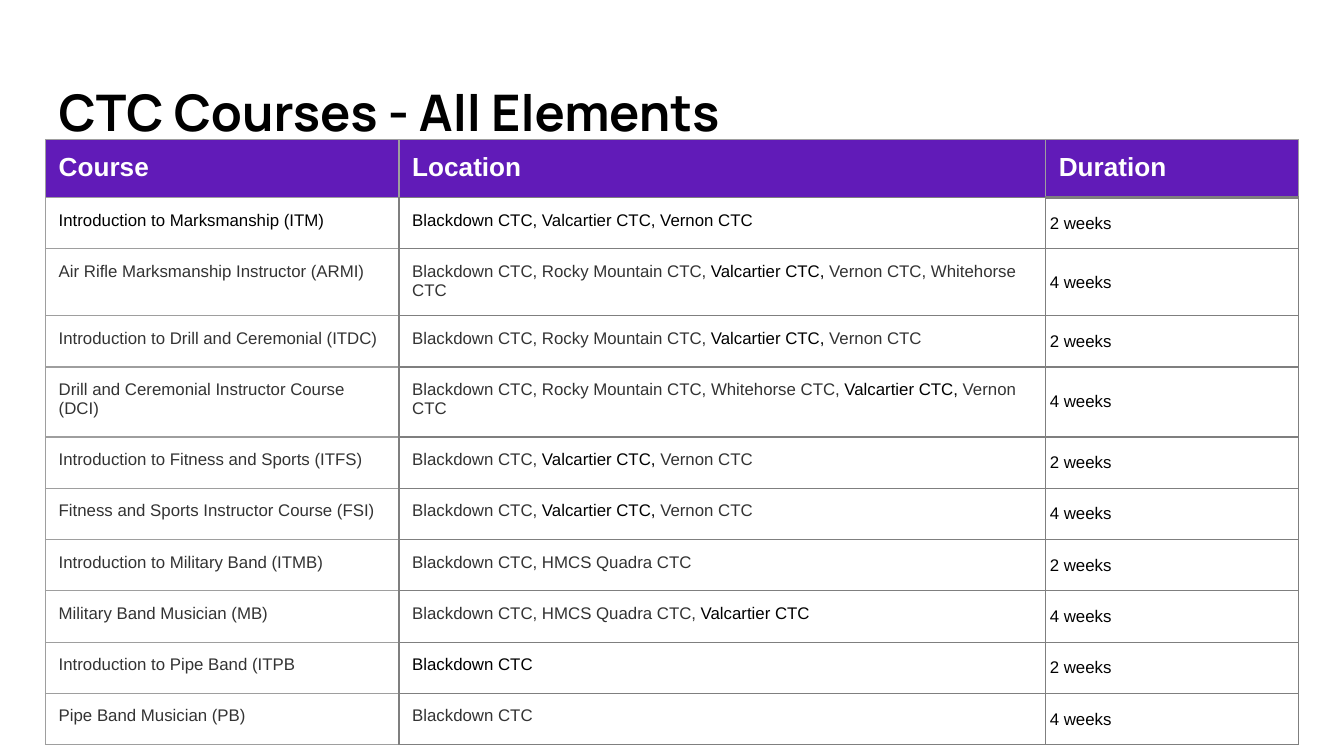
from lxml import etree
from pptx import Presentation, util as u
from pptx.dml import color
from pptx.enum import text
from pptx.oxml import ns

HUES = {"head": "611BB8", "white": "FFFFFF", "black": "000000",
        "body": "333333", "pale": "9E9E9E", "line": "7F7F7F"}
COLS = [6.68, 12.22, 4.78]
ROWS = [1.05, 0.97, 1.22, 0.97, 1.32] + [0.97] * 6
HEADS = ["Course", "Location", "Duration"]
# A bar switches between body grey and black.
DATA = [
    ("|Introduction to Marksmanship (ITM)", "|Blackdown CTC, Valcartier CTC, Vernon CTC"),
    ("Air Rifle Marksmanship Instructor (ARMI)",
     "Blackdown CTC, Rocky Mountain CTC, |Valcartier CTC, |Vernon CTC, Whitehorse CTC"),
    ("Introduction to Drill and Ceremonial (ITDC)",
     "Blackdown CTC, Rocky Mountain CTC, |Valcartier CTC, |Vernon CTC"),
    ("Drill and Ceremonial Instructor Course (DCI)",
     "Blackdown CTC, Rocky Mountain CTC, Whitehorse CTC, |Valcartier CTC, |Vernon CTC"),
    ("Introduction to Fitness and Sports (ITFS)", "Blackdown CTC, |Valcartier CTC, |Vernon CTC"),
    ("Fitness and Sports Instructor Course (FSI)", "Blackdown CTC, |Valcartier CTC, |Vernon CTC"),
    ("Introduction to Military Band (ITMB)", "Blackdown CTC, HMCS Quadra CTC"),
    ("Military Band Musician (MB)", "Blackdown CTC, HMCS Quadra CTC, |Valcartier CTC"),
    ("Introduction to Pipe Band (ITPB", "|Blackdown CTC"),
    ("Pipe Band Musician (PB)", "Blackdown CTC"),
]


def write(para, words, size, hue, bold=False, face="Arial"):
    run = para.add_run()
    run.text = words
    run.font.size = u.Pt(size)
    run.font.bold = bold
    run.font.name = face
    run.font.color.rgb = color.RGBColor.from_string(HUES[hue])


def edge(cell, side, hue, width=0.75):
    line = etree.SubElement(cell._tc.get_or_add_tcPr(), ns.qn("a:ln" + side), w=str(u.Pt(width)))
    fill = etree.SubElement(line, ns.qn("a:solidFill"))
    etree.SubElement(fill, ns.qn("a:srgbClr"), val=HUES[hue])


deck = Presentation()
deck.slide_width, deck.slide_height = u.Cm(25.4), u.Cm(14.29)
slide = deck.slides.add_slide(deck.slide_layouts[6])

frame = slide.shapes.add_textbox(u.Cm(0.86), u.Cm(1.24), u.Cm(23.67), u.Cm(1.73)).text_frame
frame.word_wrap = True
frame.vertical_anchor = text.MSO_ANCHOR.MIDDLE
write(frame.paragraphs[0], "CTC Courses - All Elements", 27, "black", True, "Manrope")

grid = slide.shapes.add_table(len(ROWS), len(COLS), u.Cm(0.86), u.Cm(2.64),
                              u.Cm(sum(COLS)), u.Cm(sum(ROWS))).table
grid.horz_banding = False
for col, width in zip(grid.columns, COLS):
    col.width = u.Cm(width)
for row, height in zip(grid.rows, ROWS):
    row.height = u.Cm(height)

for r in range(len(ROWS)):
    for c in range(len(COLS)):
        cell = grid.cell(r, c)
        para = cell.text_frame.paragraphs[0]
        last = c == 2
        for side in "LRTB":
            pale = side != "B" or c == 0 if r == 0 else c == 0 and side != "R"
            thick = last and (r, side) in [(0, "B"), (1, "T")]
            edge(cell, side, "pale" if pale else "line", 1.5 if thick else 0.75)
        slim = last and r > 0
        cell.margin_left = cell.margin_right = u.Cm(0.08 if slim else 0.25)
        cell.margin_top = cell.margin_bottom = u.Cm(0.05 if slim else 0.25)
        if r == 0:
            cell.fill.solid()
            cell.fill.fore_color.rgb = color.RGBColor.from_string(HUES["head"])
            write(para, HEADS[c], 14, "white", True)
            continue
        cell.fill.background()
        if last:
            cell.vertical_anchor = text.MSO_ANCHOR.MIDDLE
            write(para, "2 weeks" if r % 2 else "4 weeks", 9, "black")
            continue
        for n, words in enumerate(DATA[r - 1][c].split("|")):
            if words:
                write(para, words, 9, "black" if n % 2 else "body")

deck.save("out.pptx")
